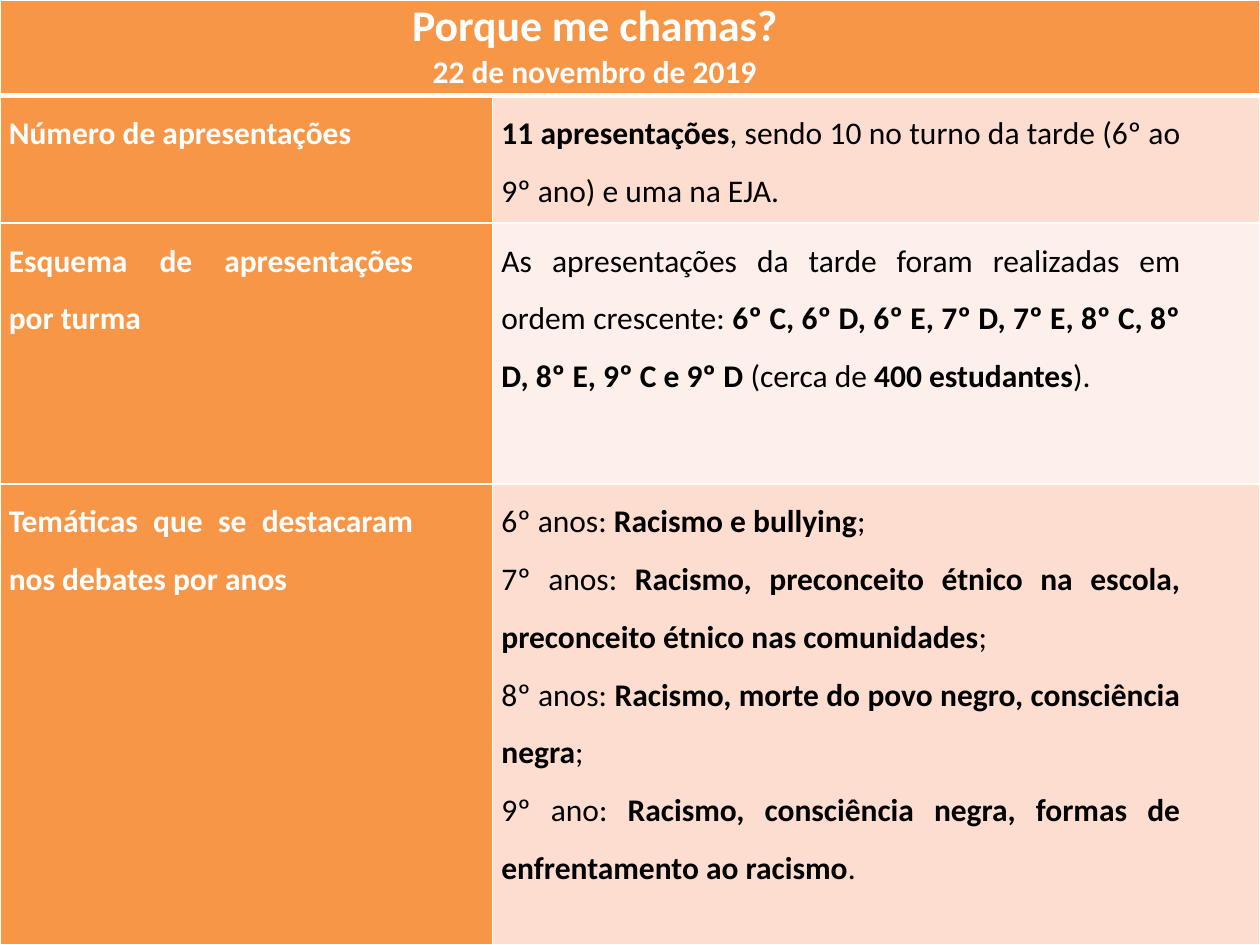
from dataclasses import dataclass

from lxml import etree
from pptx import Presentation
from pptx.dml.color import RGBColor
from pptx.enum.text import MSO_ANCHOR, PP_ALIGN
from pptx.oxml.ns import qn
from pptx.util import Inches, Pt

CENTER = PP_ALIGN.CENTER
JUSTIFY = PP_ALIGN.JUSTIFY
TOP = MSO_ANCHOR.TOP
BLANK_LAYOUT = 6


@dataclass(frozen=True)
class Theme:
    font: str = "Calibri"
    title_size: int = 25
    body_size: int = 18
    background: str = "000000"
    accent: str = "F79646"
    dark_band: str = "FCDDCF"
    light_band: str = "FDEFE9"
    light_text: str = "FFFFFF"
    dark_text: str = "000000"
    border: str = "FFFFFF"
    thin: int = 1
    thick: int = 3


class SlideBuilder:
    def __init__(self, slide, theme):
        self.slide = slide
        self.theme = theme
        background = slide.background.fill
        background.solid()
        background.fore_color.rgb = RGBColor.from_string(theme.background)

    def add_table(self, column_widths, row_heights):
        frame = self.slide.shapes.add_table(
            len(row_heights), len(column_widths), 0, 0,
            Inches(sum(column_widths)), Inches(sum(row_heights)))
        table = frame.table
        table.first_row = False
        table.horz_banding = False
        for column, width in zip(table.columns, column_widths):
            column.width = Inches(width)
        for row, height in zip(table.rows, row_heights):
            row.height = Inches(height)
        return table

    def style_cell(self, cell, color, top, bottom):
        cell.fill.solid()
        cell.fill.fore_color.rgb = RGBColor.from_string(color)
        cell.margin_left = cell.margin_right = Inches(0.07)
        cell.margin_top = cell.margin_bottom = 0
        cell.vertical_anchor = TOP
        properties = cell._tc.get_or_add_tcPr()
        thin = self.theme.thin
        sides = {"lnL": thin, "lnR": thin, "lnT": top, "lnB": bottom}
        for position, (side, width) in enumerate(sides.items()):
            line = etree.Element(qn(f"a:{side}"), w=str(Pt(width)))
            fill = etree.SubElement(line, qn("a:solidFill"))
            etree.SubElement(fill, qn("a:srgbClr"), val=self.theme.border)
            properties.insert(position, line)

    def add_paragraph(self, cell, index, runs, color, size, alignment, spacing):
        text_frame = cell.text_frame
        paragraph = text_frame.add_paragraph() if index else text_frame.paragraphs[0]
        paragraph.alignment = alignment
        paragraph.line_spacing = spacing
        paragraph.space_before = Pt(0.1)
        paragraph._p.get_or_add_pPr().set("marR", str(Inches(0.56)))
        for text, bold in runs:
            run = paragraph.add_run()
            run.text = text
            run.font.name = self.theme.font
            run.font.size = Pt(size)
            run.font.bold = bold
            run.font.color.rgb = RGBColor.from_string(color)

    def fill_header(self, table, lines):
        theme = self.theme
        for cell in table.rows[0].cells:
            self.style_cell(cell, theme.accent, theme.thin, theme.thick)
        header = table.cell(0, 0)
        header.merge(table.cell(0, len(table.columns) - 1))
        for index, (text, size) in enumerate(lines):
            self.add_paragraph(header, index, [(text, True)],
                               theme.light_text, size, CENTER, 1.0)

    def fill_row(self, table, row, label, paragraphs):
        theme = self.theme
        band = theme.dark_band if row % 2 else theme.light_band
        top = theme.thick if row == 1 else theme.thin
        contents = (
            ([[(label, True)]], theme.accent, theme.light_text),
            (paragraphs, band, theme.dark_text),
        )
        for column, (content, fill, color) in enumerate(contents):
            cell = table.cell(row, column)
            self.style_cell(cell, fill, top, theme.thin)
            for index, runs in enumerate(content):
                self.add_paragraph(cell, index, runs, color,
                                   theme.body_size, JUSTIFY, 1.5)


def year_topics(year, topics, ending):
    return [(f"{year}: ", False), (topics, True), (ending, False)]


ROWS = [
    ("Número de apresentações", [[
        ("11 apresentações", True),
        (", sendo 10 no turno da tarde (6º ao 9º ano) e uma na EJA.", False),
    ]]),
    ("Esquema de apresentações por turma", [[
        ("As apresentações da tarde foram realizadas em ordem crescente: ", False),
        ("6º C, 6º D, 6º E, 7º D, 7º E, 8º C, 8º D, 8º E, 9º C e 9º D ", True),
        ("(cerca de ", False),
        ("400 estudantes", True),
        (").", False),
    ]]),
    ("Temáticas que se destacaram nos debates por anos", [
        year_topics("6º anos", "Racismo e bullying", ";"),
        year_topics("7º anos", "Racismo, preconceito étnico na escola, "
                    "preconceito étnico nas comunidades", ";"),
        year_topics("8º anos", "Racismo, morte do povo negro, consciência negra", ";"),
        year_topics("9º ano", "Racismo, consciência negra, formas de "
                    "enfrentamento ao racismo", "."),
    ]),
]


def main():
    theme = Theme()
    presentation = Presentation()
    presentation.slide_width = Inches(10)
    presentation.slide_height = Inches(7.5)
    slide = presentation.slides.add_slide(presentation.slide_layouts[BLANK_LAYOUT])
    builder = SlideBuilder(slide, theme)
    table = builder.add_table([3.91, 6.09], [0.76, 1.01, 2.07, 3.66])
    builder.fill_header(table, [
        ("Porque me chamas?", theme.title_size),
        ("22 de novembro de 2019", theme.body_size),
    ])
    for row, (label, paragraphs) in enumerate(ROWS, start=1):
        builder.fill_row(table, row, label, paragraphs)
    presentation.save("out.pptx")


if __name__ == "__main__":
    main()
